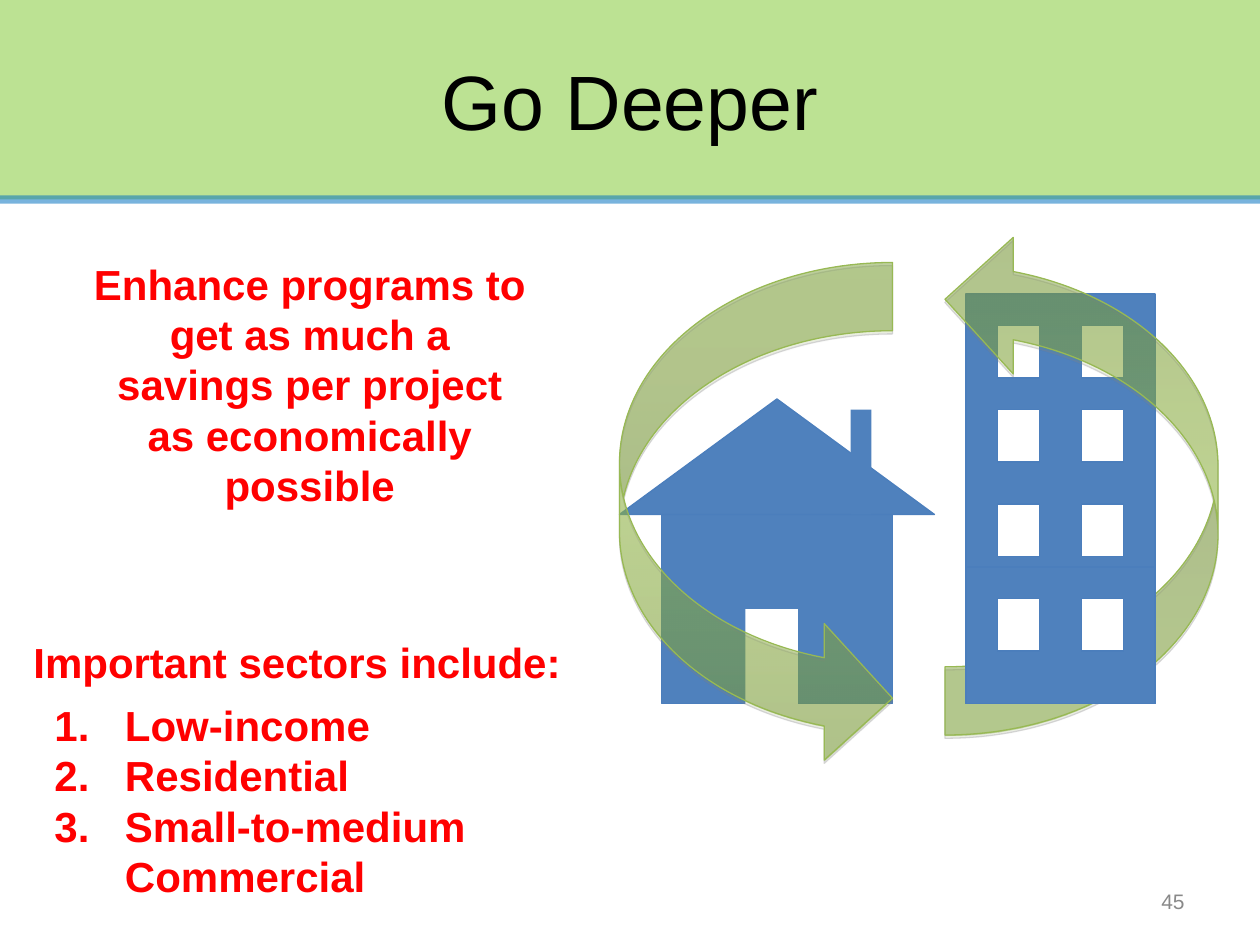
from pptx import Presentation
from pptx.dml.color import RGBColor
from pptx.enum.shapes import MSO_CONNECTOR, MSO_SHAPE
from pptx.enum.text import MSO_ANCHOR, MSO_AUTO_SIZE, PP_ALIGN
from pptx.oxml import parse_xml
from pptx.oxml.ns import nsdecls, qn
from pptx.util import Inches, Pt

RECT, TRIANGLE = MSO_SHAPE.RECTANGLE, MSO_SHAPE.ISOSCELES_TRIANGLE
ARROW = MSO_SHAPE.CURVED_RIGHT_ARROW
STRAIGHT = MSO_CONNECTOR.STRAIGHT
LEFT, CENTER, RIGHT = PP_ALIGN.LEFT, PP_ALIGN.CENTER, PP_ALIGN.RIGHT
TOP, MIDDLE = MSO_ANCHOR.TOP, MSO_ANCHOR.MIDDLE
GROW = MSO_AUTO_SIZE.SHAPE_TO_FIT_TEXT

BLUE, EDGE, WHITE, RED = "4F81BD", "4B7EBC", "FFFFFF", "FF0000"
ARROW_EDGE = "98B954"
ARROW_STOPS = [(0, "9CC746"), (20, "9BC348"), (100, "769535")]


def color(code):
    return RGBColor.from_string(code)


def units(*cells):
    return [Inches(cell / 12) for cell in cells]


def drawing(tag, attributes="", inner=""):
    return parse_xml(f'<a:{tag} {nsdecls("a")} {attributes}>{inner}</a:{tag}>')


def color_xml(code, alpha):
    return f'<a:srgbClr val="{code}"><a:alpha val="{alpha * 1000}"/></a:srgbClr>'


class Slide:
    font = "Arial"

    def __init__(self, deck):
        self.page = deck.slides.add_slide(deck.slide_layouts[5])
        self.shapes = self.page.shapes

    def fill_text(self, frame, lines, size, ink, align, anchor, bold=False):
        frame.text = "\n".join(lines)
        frame.vertical_anchor = anchor
        for para in frame.paragraphs:
            para.alignment = align
            for span in para.runs:
                span.font.name, span.font.size = self.font, Pt(size)
                span.font.bold = bold
                span.font.color.rgb = color(ink)

    def title(self, text, cells):
        box = self.shapes.title
        box.left, box.top, box.width, box.height = units(*cells)
        self.fill_text(box.text_frame, [text], 44, "000000", CENTER, MIDDLE)
        self.shapes._spTree.append(box._element)

    def text(self, lines, cells, size=24, ink=RED, align=LEFT, anchor=TOP,
             bold=True, wrap=True):
        box = self.shapes.add_textbox(*units(*cells))
        frame = box.text_frame
        frame.word_wrap, frame.auto_size = wrap, GROW
        self.fill_text(frame, lines, size, ink, align, anchor, bold)
        return frame

    def numbered(self, lines, cells):
        frame = self.text(lines, cells)
        frame.margin_right = Inches(0.8)
        for para in frame.paragraphs:
            props = para._p.get_or_add_pPr()
            props.set("marL", str(Inches(0.56)))
            props.set("indent", str(-Inches(0.56)))
            props.append(drawing("buAutoNum", 'type="arabicPeriod"'))

    def shape(self, cells, fill=BLUE, edge=EDGE, kind=RECT, alpha=100):
        item = self.shapes.add_shape(kind, *units(*cells))
        item.shadow.inherit = False
        item.fill.solid()
        item.fill.fore_color.rgb = color(fill)
        if alpha < 100:
            tint = item._element.spPr.find(qn("a:solidFill"))[0]
            tint.append(drawing("alpha", f'val="{alpha * 1000}"'))
        if edge:
            item.line.color.rgb = color(edge)
            item.line.width = Pt(0.75)
        else:
            item.line.fill.background()
        return item

    def rule(self, cells, ink, width, alpha):
        line = self.shapes.add_connector(STRAIGHT, *units(*cells))
        line.line.color.rgb = color(ink)
        line.line.width = Pt(width)
        props = line._element.spPr
        tint = props.find(qn("a:ln")).find(qn("a:solidFill"))[0]
        tint.append(drawing("alpha", f'val="{alpha * 1000}"'))
        props.append(drawing("effectLst"))

    def cycle_arrow(self, cells, alpha, rotation=0):
        item = self.shape(cells, edge=ARROW_EDGE, kind=ARROW)
        item.rotation = rotation
        for index, value in enumerate((0.25, 0.5, 0.25)):
            item.adjustments[index] = value
        stops = "".join(f'<a:gs pos="{place * 1000}">{color_xml(code, alpha)}</a:gs>'
                        for place, code in ARROW_STOPS)
        props = item._element.spPr
        props.replace(props.find(qn("a:solidFill")), drawing(
            "gradFill", 'rotWithShape="1"',
            f'<a:gsLst>{stops}</a:gsLst><a:lin ang="5400000" scaled="0"/>'))
        props.find(qn("a:effectLst")).append(drawing(
            "outerShdw", f'blurRad="0" dist="{Pt(1.8)}" dir="5400000" rotWithShape="0"',
            color_xml("808080", 35)))

    def windows(self, rows):
        for row in rows:
            for column in (95, 103):
                self.shape((column, row, 4, 5), WHITE)


def main():
    deck = Presentation()
    deck.slide_width, deck.slide_height = units(120, 90)
    slide = Slide(deck)

    slide.shape((0, 0, 120, 19), "92D050", None, alpha=61)
    slide.rule((0, 19, 120, 19), "0070C0", 4.75, 53)
    slide.title("Go Deeper", (6, 2, 108, 15))
    slide.text(["45"], (86, 83.4, 28, 4.8), 12, "898989", RIGHT, MIDDLE, bold=False)

    slide.shape((92, 28, 18, 39))
    slide.shape((63, 47, 22, 20))
    slide.windows((31, 39, 48))
    slide.shape((59, 38, 30, 11), kind=TRIANGLE)
    slide.shape((71, 58, 5, 10), WHITE, None)
    slide.shape((81, 39, 2, 10), edge=None)
    slide.cycle_arrow((90, 22, 26, 48), 48, rotation=180)
    slide.cycle_arrow((59, 25, 26, 48), 49)
    slide.shape((92, 54, 18, 13))
    slide.windows((57,))

    slide.numbered(["Low-income", "Residential", "Small-to-medium Commercial"],
                   (4, 66, 65.4, 15.7))
    slide.text(["Enhance programs to get as much a savings per project",
                "as economically possible"], (7, 24, 45, 25.4), align=CENTER)
    slide.text(["Important sectors include:"], (2, 60, 53.2, 6.1), wrap=False)

    deck.save("out.pptx")


if __name__ == "__main__":
    main()
